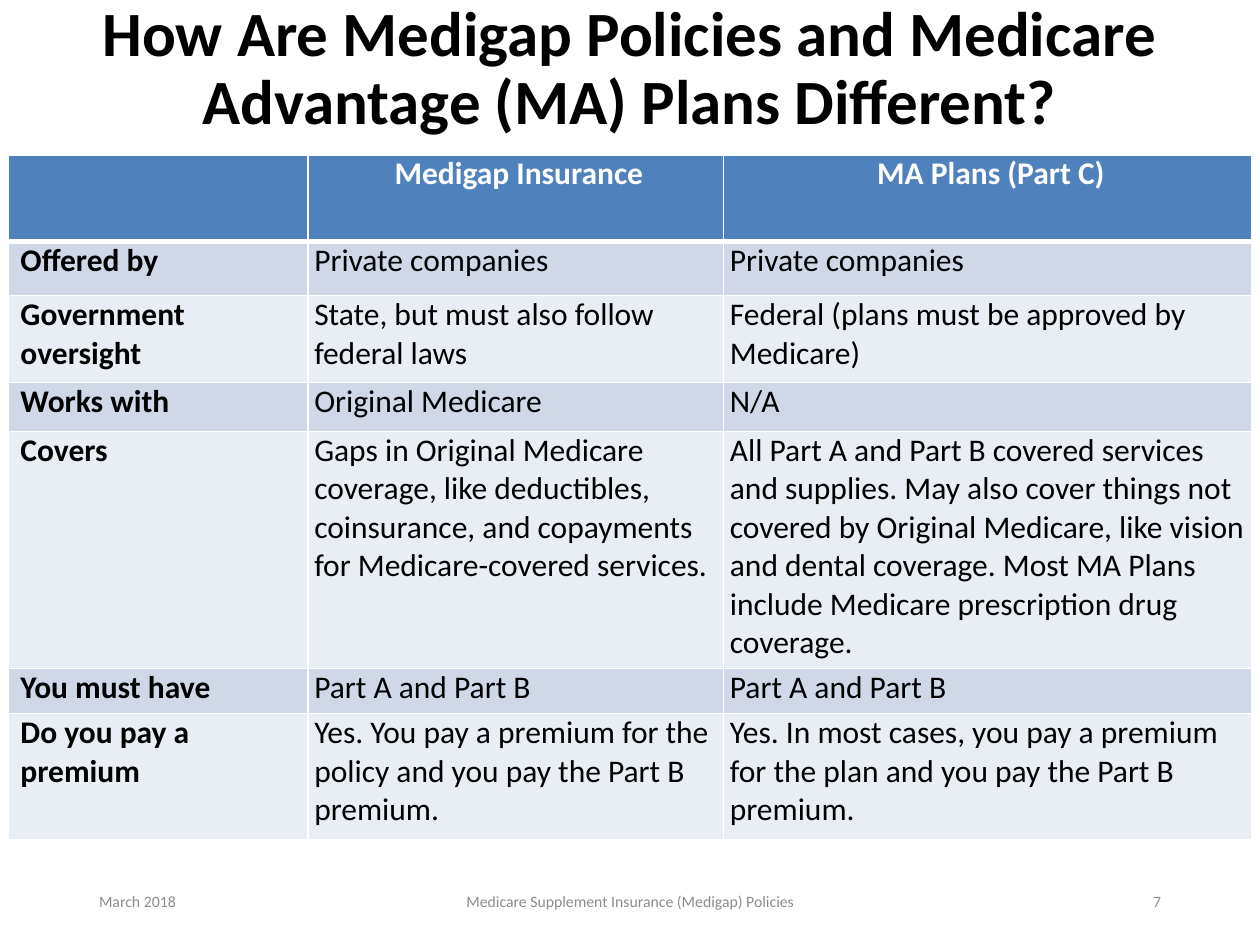
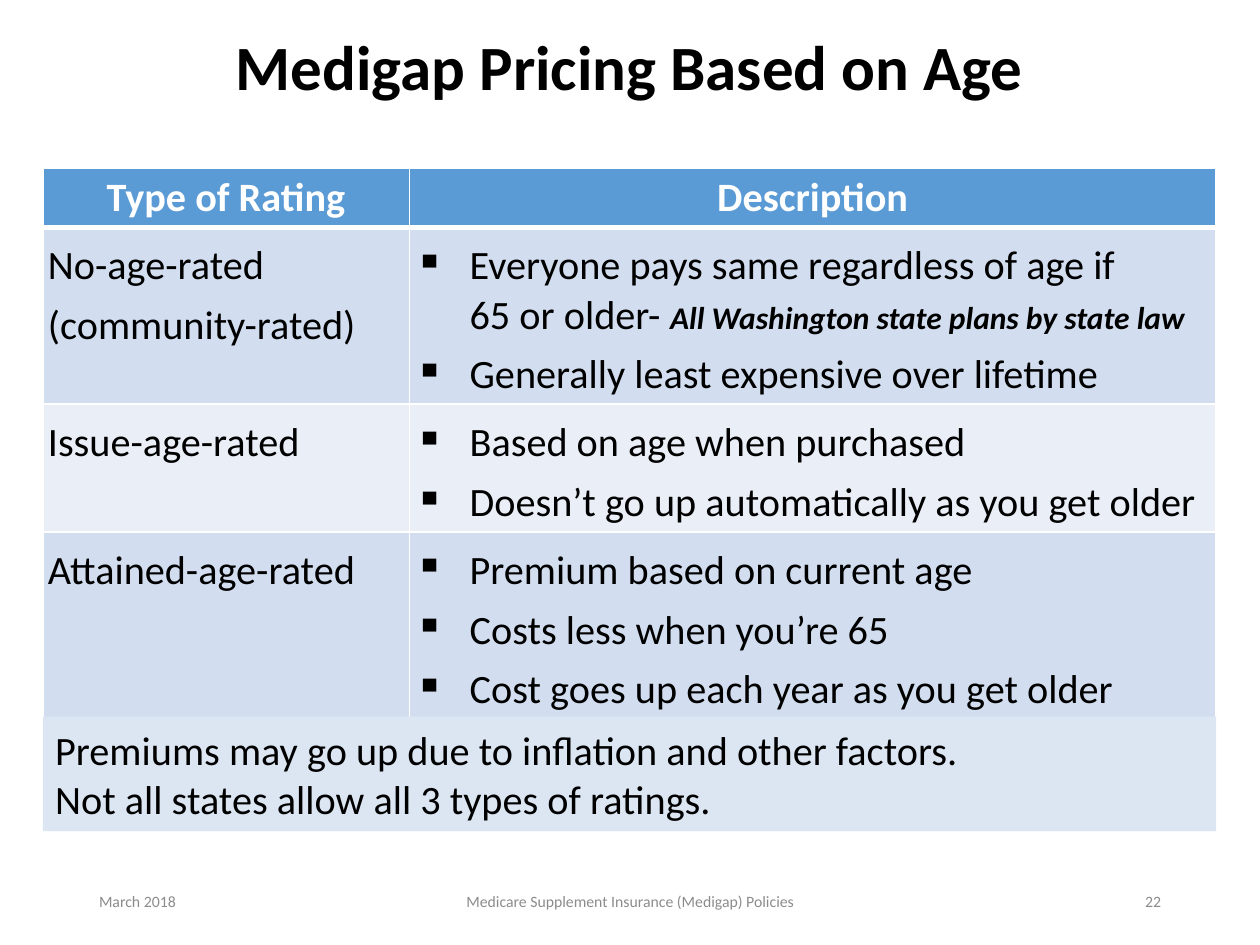
from lxml.etree import SubElement
from pptx import Presentation
from pptx.dml.color import RGBColor
from pptx.enum.shapes import MSO_SHAPE
from pptx.enum.text import MSO_ANCHOR, MSO_AUTO_SIZE, PP_ALIGN
from pptx.oxml.ns import qn
from pptx.util import Pt

FONT = "Calibri"
COLORS = {
    "text": "000000",
    "white": "FFFFFF",
    "footer": "8C8C8C",
    "comparison_header": "4F81BD",
    "comparison_dark": "D0D8E8",
    "comparison_light": "E9EDF4",
    "pricing_header": "5B9BD5",
    "pricing_dark": "D2DEEF",
    "pricing_light": "EAEFF7",
    "note": "DCE6F2",
}
TITLE_BOX = (49.5, 0, 620.5, 80)
FOOTER_BOX = (49.5, 500.5, 621, 29)
COMPARISON_BOX = (4.5, 88.5)
PRICING_BOX = (24.5, 96)
NOTE_BOX = (24.5, 409.5, 670.5, 65.5)

COMPARISON_ROWS = [
    ("", "Medigap Insurance", "MA Plans (Part C)"),
    ("Offered by", "Private companies", "Private companies"),
    ("Government oversight", "State, but must also follow federal laws",
     "Federal (plans must be approved by Medicare)"),
    ("Works with", "Original Medicare", "N/A"),
    ("Covers",
     "Gaps in Original Medicare coverage, like deductibles, coinsurance, "
     "and copayments for Medicare-covered services.",
     "All Part A and Part B covered services and supplies. May also cover "
     "things not covered by Original Medicare, like vision and dental coverage. "
     "Most MA Plans include Medicare prescription drug coverage."),
    ("You must have", "Part A and Part B", "Part A and Part B"),
    ("Do you pay a premium",
     "Yes. You pay a premium for the policy and you pay the Part B premium.",
     "Yes. In most cases, you pay a premium for the plan and you pay the Part B premium."),
]
PRICING_ROWS = [
    (["Type of Rating"], ["Description"]),
    (["No-age-rated", "(community-rated)"],
     ["Everyone pays same regardless of age if \v65 or older- ",
      "Generally least expensive over lifetime"]),
    (["Issue-age-rated"],
     ["Based on age when purchased", "Doesn’t go up automatically as you get older"]),
    (["Attained-age-rated"],
     ["Premium based on current age", "Costs less when you’re 65",
      "Cost goes up each year as you get older"]),
]
STATE_LAW_REMARK = "All Washington state plans by state law"


def color(name):
    return RGBColor.from_string(COLORS[name])


def points(*values):
    return [Pt(value) for value in values]


def style_font(font, size, color_name="text", bold=False, italic=False):
    font.name = FONT
    font.size = Pt(size)
    font.bold = bold
    font.italic = italic
    font.color.rgb = color(color_name)


def style_runs(paragraph, size, color_name="text", bold=False):
    for run in paragraph.runs:
        style_font(run.font, size, color_name, bold)


def set_indent(paragraph, left, bullet=None):
    """Indent a paragraph; a bullet hangs in the indent."""
    properties = paragraph._p.get_or_add_pPr()
    properties.set("marL", str(Pt(left)))
    properties.set("indent", str(-Pt(left) if bullet else 0))
    if bullet:
        SubElement(properties, qn("a:buChar"), char=bullet)


def set_borders(cell, top, bottom):
    properties = cell._tc.get_or_add_tcPr()
    for side, width in (("L", 1), ("R", 1), ("T", top), ("B", bottom)):
        line = SubElement(properties, qn(f"a:ln{side}"), w=str(Pt(width)))
        fill = SubElement(line, qn("a:solidFill"))
        SubElement(fill, qn("a:srgbClr"), val=COLORS["white"])


def add_grid(slide, box, widths, heights, palette, rules):
    """Add a banded table; rules holds the widths of its horizontal lines."""
    frame = slide.shapes.add_table(len(heights), len(widths),
                                   *points(*box, sum(widths), sum(heights)))
    table = frame.table
    table.horz_banding = False
    for column, width in zip(table.columns, widths):
        column.width = Pt(width)
    for index, height in enumerate(heights):
        table.rows[index].height = Pt(height)
        band = "header" if index == 0 else "dark" if index % 2 else "light"
        for cell in table.rows[index].cells:
            set_borders(cell, rules[index], rules[index + 1])
            cell.fill.solid()
            cell.fill.fore_color.rgb = color(f"{palette}_{band}")
    return table


def set_margins(cell, side, top):
    cell.margin_left = cell.margin_right = cell.margin_bottom = Pt(side)
    cell.margin_top = Pt(top)


def add_comparison_table(slide, box):
    table = add_grid(slide, box, (171.5, 237.5, 302), (49.5, 31, 49.5, 28, 135.5, 26, 72),
                     "comparison", (1, 3, 1, 1, 1, 1, 0.5, 1))
    for row_index, texts in enumerate(COMPARISON_ROWS):
        for column_index, text in enumerate(texts):
            if not text:
                continue
            is_header, is_label = row_index == 0, column_index == 0
            cell = table.cell(row_index, column_index)
            set_margins(cell, 0, 0)
            cell.text_frame.text = text
            paragraph = cell.text_frame.paragraphs[0]
            set_indent(paragraph, 7.2 if is_label else 3.6)
            paragraph.alignment = PP_ALIGN.CENTER if is_header else PP_ALIGN.LEFT
            style_runs(paragraph, 18, "white" if is_header else "text", is_header or is_label)


def add_pricing_table(slide, box):
    table = add_grid(slide, box, (209.5, 461), (34, 101, 73, 107),
                     "pricing", (1, 3, 1, 1, 1))
    for row_index, row in enumerate(PRICING_ROWS):
        is_header = row_index == 0
        for column_index, lines in enumerate(row):
            cell = table.cell(row_index, column_index)
            set_margins(cell, 2.9, 2.9 if is_header else 7.9)
            cell.text_frame.text = lines[0]
            for line in lines[1:]:
                paragraph = cell.text_frame.add_paragraph()
                paragraph.text = line
                paragraph.space_before = Pt(6)
            for paragraph in cell.text_frame.paragraphs:
                if is_header:
                    paragraph.alignment = PP_ALIGN.CENTER
                elif column_index == 1:
                    set_indent(paragraph, 31.5, "▪")
                style_runs(paragraph, 23, "white" if is_header else "text", is_header)
    remark = table.cell(1, 1).text_frame.paragraphs[0].add_run()
    remark.text = STATE_LAW_REMARK
    style_font(remark.font, 18, bold=True, italic=True)


def add_note(slide, box):
    note = slide.shapes.add_shape(MSO_SHAPE.RECTANGLE, *points(*box))
    note.shadow.inherit = False
    note.fill.solid()
    note.fill.fore_color.rgb = color("note")
    note.line.fill.background()
    note.text_frame.word_wrap = True
    note.text_frame.vertical_anchor = MSO_ANCHOR.MIDDLE
    note.text_frame.text = ("Premiums may go up due to inflation and other factors.\n"
                            "Not all states allow all 3 types of ratings.")
    for paragraph in note.text_frame.paragraphs:
        paragraph.alignment = PP_ALIGN.LEFT
        style_runs(paragraph, 23)


def set_title(slide, box, text):
    title = slide.shapes.title
    title.left, title.top, title.width, title.height = points(*box)
    frame = title.text_frame
    frame.text = text
    frame.word_wrap = True
    frame.auto_size = MSO_AUTO_SIZE.NONE
    frame.vertical_anchor = MSO_ANCHOR.MIDDLE
    paragraph = frame.paragraphs[0]
    paragraph.alignment = PP_ALIGN.CENTER
    paragraph.line_spacing = 0.9
    style_runs(paragraph, 36, bold=True)


def add_footer(slide, box, number):
    left, top, width, height = box
    side_width, middle_width = 162, 243
    parts = (
        ("March 2018", 0, side_width, PP_ALIGN.LEFT),
        ("Medicare Supplement Insurance (Medigap) Policies",
         (width - middle_width) / 2, middle_width, PP_ALIGN.CENTER),
        (str(number), width - side_width, side_width, PP_ALIGN.RIGHT),
    )
    for text, offset, part_width, alignment in parts:
        part = slide.shapes.add_textbox(*points(left + offset, top, part_width, height))
        frame = part.text_frame
        frame.word_wrap = True
        frame.vertical_anchor = MSO_ANCHOR.MIDDLE
        frame.text = text
        frame.paragraphs[0].alignment = alignment
        style_runs(frame.paragraphs[0], 9, "footer")


def add_titled_slide(presentation, title, number):
    slide = presentation.slides.add_slide(presentation.slide_layouts[5])
    set_title(slide, TITLE_BOX, title)
    add_footer(slide, FOOTER_BOX, number)
    return slide


def main():
    presentation = Presentation()
    presentation.slide_width, presentation.slide_height = points(720, 540)

    comparison = add_titled_slide(
        presentation, "How Are Medigap Policies and Medicare Advantage (MA) Plans Different?", 7)
    add_comparison_table(comparison, COMPARISON_BOX)

    pricing = add_titled_slide(presentation, "Medigap Pricing Based on Age", 22)
    add_pricing_table(pricing, PRICING_BOX)
    add_note(pricing, NOTE_BOX)

    presentation.save("out.pptx")


if __name__ == "__main__":
    main()
